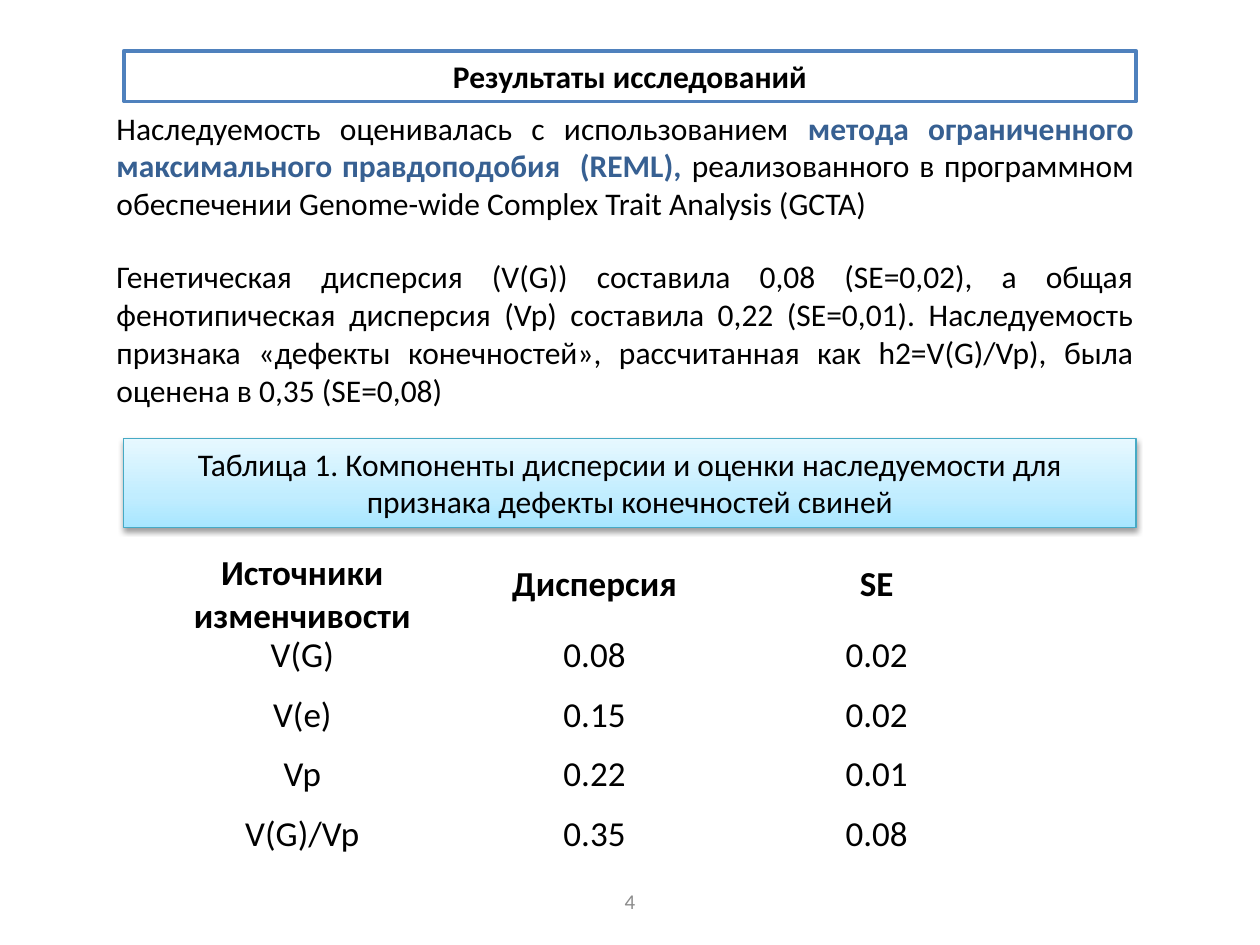
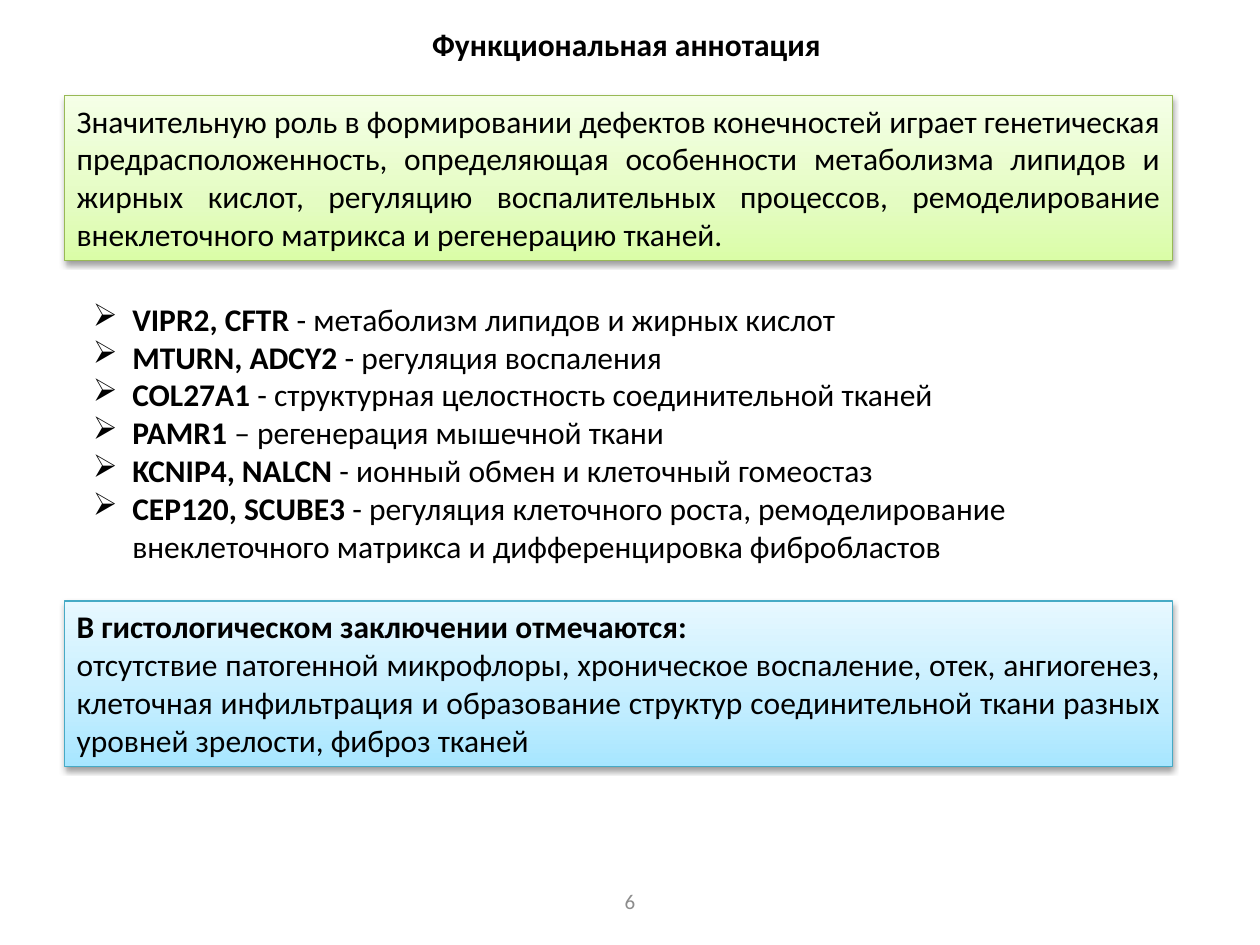
"""Builds two slides on the heritability and functional annotation of limb defects in pigs."""
from lxml.etree import SubElement
from pptx import Presentation
from pptx.dml.color import RGBColor
from pptx.enum.shapes import MSO_SHAPE
from pptx.enum.text import MSO_ANCHOR, PP_ALIGN
from pptx.oxml.ns import qn
from pptx.util import Pt

FONT = "Calibri"
BLACK, WHITE, GREY = "000000", "FFFFFF", "8C8C8C"
FRAME_BLUE, ACCENT_BLUE = "4F81BD", "376092"
BLUE_PANEL = {"line": "46AAC5", "stops": [(0, "A7E6FF"), (35, "C1EDFF"), (100, "E7F8FF")]}
GREEN_PANEL = {"line": "98B955", "stops": [(0, "DAFDA7"), (35, "E4FCC2"), (100, "F5FFE7")]}

RESULTS_TITLE = "Результаты исследований"
METHOD = [
    ("Наследуемость оценивалась с использованием ", False, BLACK),
    ("метода ограниченного максимального правдоподобия  (REML), ", True, ACCENT_BLUE),
    ("реализованного в программном обеспечении Genome-wide Complex Trait Analysis (GCTA)", False, BLACK),
]
ESTIMATE = (
    "Генетическая дисперсия (V(G)) составила 0,08 (SE=0,02), а общая фенотипическая дисперсия (Vp) "
    "составила 0,22 (SE=0,01). Наследуемость признака «дефекты конечностей», рассчитанная как "
    "h2=V(G)/Vp), была оценена в 0,35 (SE=0,08)"
)
TABLE_CAPTION = "Таблица 1. Компоненты дисперсии и оценки наследуемости для признака дефекты конечностей свиней"
VARIANCE_ROWS = [
    ("Источники изменчивости", "Дисперсия", "SE"),
    ("V(G)", "0.08", "0.02"),
    ("V(e)", "0.15", "0.02"),
    ("Vp", "0.22", "0.01"),
    ("V(G)/Vp", "0.35", "0.08"),
]
COLUMN_WIDTHS = (170, 164, 158.5)
HEADER_HEIGHT, ROW_HEIGHT = 45.5, 34

ANNOTATION_TITLE = "Функциональная аннотация"
GENETIC_ROLE = (
    "Значительную роль в формировании дефектов конечностей играет генетическая предрасположенность, "
    "определяющая особенности метаболизма липидов и жирных кислот, регуляцию воспалительных процессов, "
    "ремоделирование внеклеточного матрикса и регенерацию тканей."
)
GENES = [
    ("VIPR2, CFTR", " - метаболизм липидов и жирных кислот"),
    ("MTURN, ADCY2", " - регуляция воспаления"),
    ("COL27A1", " - структурная целостность соединительной тканей"),
    ("PAMR1", " – регенерация мышечной ткани"),
    ("KCNIP4, NALCN", " - ионный обмен и клеточный гомеостаз"),
    ("CEP120, SCUBE3", " - регуляция клеточного роста, ремоделирование внеклеточного матрикса "
                       "и дифференцировка фибробластов"),
]
HISTOLOGY_TITLE = "В гистологическом заключении отмечаются:"
HISTOLOGY = (
    "отсутствие патогенной микрофлоры, хроническое воспаление, отек, ангиогенез, клеточная инфильтрация "
    "и образование структур соединительной ткани разных уровней зрелости, фиброз тканей"
)


def color(value):
    return RGBColor.from_string(value)


def plain(text, bold=False, tint=BLACK):
    return [(text, bold, tint)]


def write(frame, paragraphs, align, size=18):
    frame.word_wrap = True
    for index, spans in enumerate(paragraphs):
        para = frame.paragraphs[0] if index == 0 else frame.add_paragraph()
        para.alignment = align
        para.font.name, para.font.size = FONT, Pt(size)
        for text, bold, tint in spans:
            span = para.add_run()
            span.text = text
            span.font.bold = bold
            span.font.color.rgb = color(tint)


def add_text(page, area, paragraphs, align, size=18):
    box = page.shapes.add_textbox(*map(Pt, area))
    write(box.text_frame, paragraphs, align, size)
    return box


def add_box(page, area, line, line_width, paragraphs, align):
    box = page.shapes.add_shape(MSO_SHAPE.RECTANGLE, *map(Pt, area))
    box.shadow.inherit = False
    box.fill.solid()
    box.fill.fore_color.rgb = color(WHITE)
    box.line.color.rgb = color(line)
    box.line.width = Pt(line_width)
    box.text_frame.vertical_anchor = MSO_ANCHOR.TOP
    write(box.text_frame, paragraphs, align)
    return box


def add_panel(page, area, style, paragraphs, align):
    box = add_box(page, area, style["line"], 0.75, paragraphs, align)
    box.fill.gradient()
    box.fill.gradient_angle = 90
    properties = box.element.spPr
    stops = properties.find(".//" + qn("a:gsLst"))
    for stop in list(stops):
        stops.remove(stop)
    for position, tint in style["stops"]:
        stop = SubElement(stops, qn("a:gs"), pos=str(position * 1000))
        SubElement(stop, qn("a:srgbClr"), val=tint)
    shadow = SubElement(properties.find(qn("a:effectLst")), qn("a:outerShdw"),
                        blurRad=str(Pt(3.1)), dist=str(Pt(1.6)), dir="5400000", rotWithShape="0")
    shade = SubElement(shadow, qn("a:srgbClr"), val=BLACK)
    SubElement(shade, qn("a:alpha"), val="38000")


def add_bullets(box):
    for para in box.text_frame.paragraphs:
        properties = para._p.get_or_add_pPr()
        properties.set("marL", str(Pt(22.5)))
        properties.set("indent", str(-Pt(22.5)))
        bullet = SubElement(properties, qn("a:buChar"), char="➢")
        properties.remove(bullet)
        properties.insert(0, bullet)


def add_variance_table(page, left, top):
    count = len(VARIANCE_ROWS)
    height = HEADER_HEIGHT + ROW_HEIGHT * (count - 1)
    table = page.shapes.add_table(count, len(COLUMN_WIDTHS), Pt(left), Pt(top),
                                  Pt(sum(COLUMN_WIDTHS)), Pt(height)).table
    table.first_row = table.horz_banding = False
    for column, width in zip(table.columns, COLUMN_WIDTHS):
        column.width = Pt(width)
    for row_index, values in enumerate(VARIANCE_ROWS):
        header = row_index == 0
        table.rows[row_index].height = Pt(HEADER_HEIGHT if header else ROW_HEIGHT)
        for column_index, value in enumerate(values):
            cell = table.cell(row_index, column_index)
            cell.fill.background()
            cell.vertical_anchor = MSO_ANCHOR.MIDDLE
            cell.margin_left = cell.margin_right = Pt(5)
            cell.margin_top = cell.margin_bottom = 0
            write(cell.text_frame, [plain(value, header)], PP_ALIGN.CENTER, 20)
            if not (header and column_index == 0):
                cell.text_frame.paragraphs[0].line_spacing = Pt(13)


def add_page(deck, number):
    page = deck.slides.add_slide(deck.slide_layouts[6])
    box = add_text(page, (246, 500.5, 228, 28.75), [plain(str(number), tint=GREY)], PP_ALIGN.CENTER, 12)
    box.text_frame.vertical_anchor = MSO_ANCHOR.MIDDLE
    return page


def build_results(deck):
    page = add_page(deck, 4)
    add_box(page, (70.75, 29, 578.5, 29), FRAME_BLUE, 2,
            [plain(RESULTS_TITLE, True)], PP_ALIGN.CENTER)
    add_text(page, (59.5, 58.5, 595.5, 72.5), [METHOD], PP_ALIGN.JUSTIFY)
    add_text(page, (59.5, 143.5, 595.5, 94.5), [plain(ESTIMATE)], PP_ALIGN.JUSTIFY)
    add_panel(page, (70.75, 250.5, 578.5, 51), BLUE_PANEL, [plain(TABLE_CAPTION)], PP_ALIGN.CENTER)
    add_variance_table(page, 87.75, 315.5)


def build_annotation(deck):
    page = add_page(deck, 6)
    add_text(page, (91.5, 11, 533, 29), [plain(ANNOTATION_TITLE, True)], PP_ALIGN.CENTER)
    add_panel(page, (36.75, 54.5, 633.5, 94.5), GREEN_PANEL, [plain(GENETIC_ROLE)], PP_ALIGN.JUSTIFY)
    genes = [plain(name, True) + plain(role) for name, role in GENES]
    add_bullets(add_text(page, (46, 167.75, 623.5, 160), genes, PP_ALIGN.LEFT))
    add_panel(page, (36.75, 343.5, 633.5, 94.5), BLUE_PANEL,
              [plain(HISTOLOGY_TITLE, True), plain(HISTOLOGY)], PP_ALIGN.JUSTIFY)


def main():
    deck = Presentation()
    deck.slide_width, deck.slide_height = Pt(720), Pt(540)
    build_results(deck)
    build_annotation(deck)
    deck.save("out.pptx")


if __name__ == "__main__":
    main()
